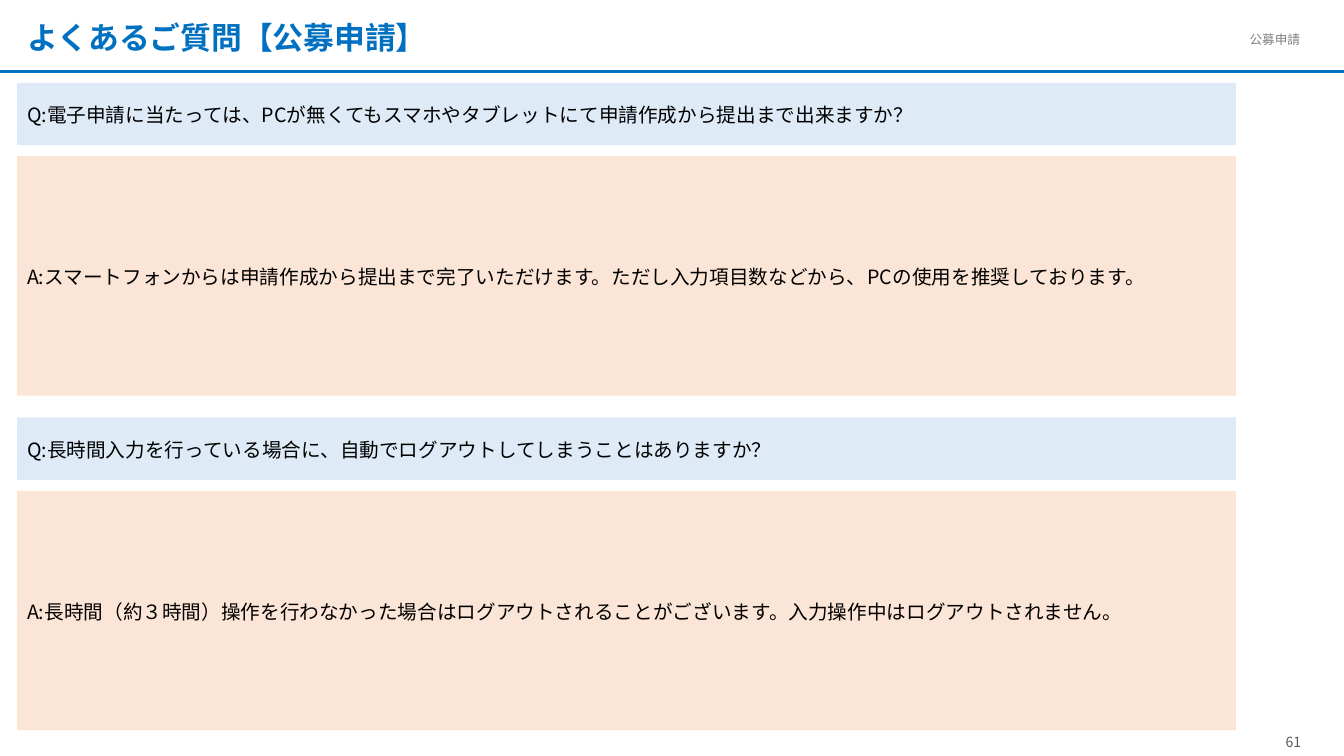
from dataclasses import dataclass

from lxml.etree import SubElement
from pptx import Presentation
from pptx.dml.color import RGBColor
from pptx.enum.shapes import MSO_CONNECTOR as Connector, MSO_SHAPE as Shape
from pptx.enum.text import MSO_ANCHOR as Anchor, PP_ALIGN as Align
from pptx.oxml.ns import qn
from pptx.util import Pt

FONT = "Noto Sans CJK JP"
BLUE = RGBColor(0x00, 0x70, 0xC0)
QUESTION_FILL = RGBColor(0xDE, 0xEB, 0xF7)
ANSWER_FILL = RGBColor(0xFB, 0xE5, 0xD6)
BLACK = RGBColor(0x00, 0x00, 0x00)
SECTION_GREY = RGBColor(0x80, 0x80, 0x80)
PAGE_GREY = RGBColor(0x59, 0x59, 0x59)
WHITE = RGBColor(0xFF, 0xFF, 0xFF)

# Layout in points
SLIDE_W, SLIDE_H = 960, 540
RULE_Y = 51.12
LEFT, PANEL_W = 12.24, 870.5
FAQ_TOP, FAQ_PITCH = 59.2, 239
QUESTION_H, ANSWER_OFFSET, ANSWER_H = 44.6, 52.4, 171


@dataclass(frozen=True)
class Box:
    left: float
    top: float
    width: float
    height: float

    def points(self) -> tuple:
        return Pt(self.left), Pt(self.top), Pt(self.width), Pt(self.height)


@dataclass(frozen=True)
class Faq:
    question: str
    answer: str


FAQS = [
    Faq("Q:電子申請に当たっては、PCが無くてもスマホやタブレットにて申請作成から提出まで出来ますか？",
        "A:スマートフォンからは申請作成から提出まで完了いただけます。"
        "ただし入力項目数などから、PCの使用を推奨しております。"),
    Faq("Q:長時間入力を行っている場合に、自動でログアウトしてしまうことはありますか？",
        "A:長時間（約３時間）操作を行わなかった場合はログアウトされることがございます。"
        "入力操作中はログアウトされません。"),
]


def write(shape, text: str, size: float, color: RGBColor, bold: bool = False,
          anchor: Anchor = Anchor.MIDDLE, align: Align = Align.LEFT):
    """Put one run of text into the shape and return its paragraph."""
    frame = shape.text_frame
    frame.word_wrap = True
    frame.vertical_anchor = anchor
    paragraph = frame.paragraphs[0]
    paragraph.alignment = align
    run = paragraph.add_run()
    run.text = text
    run.font.size = Pt(size)
    run.font.bold = bold
    run.font.color.rgb = color
    run.font.name = FONT
    SubElement(run.font._element, qn("a:ea"), typeface=FONT)
    return paragraph


def add_panel(slide, box: Box, fill: RGBColor, text: str) -> None:
    panel = slide.shapes.add_shape(Shape.RECTANGLE, *box.points())
    panel.shadow.inherit = False
    panel.fill.solid()
    panel.fill.fore_color.rgb = fill
    panel.line.fill.background()
    write(panel, text, 14, BLACK).line_spacing = Pt(18)


def add_header(slide) -> None:
    rule = slide.shapes.add_connector(
        Connector.STRAIGHT, Pt(0), Pt(RULE_Y), Pt(SLIDE_W), Pt(RULE_Y))
    rule.line.color.rgb = BLUE
    rule.line.width = Pt(2)
    SubElement(rule._element.spPr, qn("a:effectLst"))

    section = slide.shapes.add_textbox(*Box(872, 0, 88, RULE_Y).points())
    label = write(section, "公募申請", 9, SECTION_GREY)
    label.line_spacing = 1.5
    label._p.get_or_add_pPr().set("marL", str(Pt(13.5)))

    title = slide.shapes.add_textbox(*Box(LEFT, 8.64, 602.6, 35.3).points())
    write(title, "よくあるご質問【公募申請】", 22, BLUE, bold=True)


def add_page_number(slide) -> None:
    page = slide.shapes.add_textbox(*Box(899.3, 520.6, 49, 19.4).points())
    write(page, "61", 10, PAGE_GREY, anchor=Anchor.TOP, align=Align.CENTER)


def main() -> None:
    deck = Presentation()
    deck.slide_width, deck.slide_height = Pt(SLIDE_W), Pt(SLIDE_H)
    slide = deck.slides.add_slide(deck.slide_layouts[6])
    slide.background.fill.solid()
    slide.background.fill.fore_color.rgb = WHITE

    add_header(slide)
    add_page_number(slide)

    # Question and answer pairs
    for index, faq in enumerate(FAQS):
        top = FAQ_TOP + index * FAQ_PITCH
        add_panel(slide, Box(LEFT, top, PANEL_W, QUESTION_H),
                  QUESTION_FILL, faq.question)
        add_panel(slide, Box(LEFT, top + ANSWER_OFFSET, PANEL_W, ANSWER_H),
                  ANSWER_FILL, faq.answer)

    deck.save("out.pptx")


if __name__ == "__main__":
    main()
